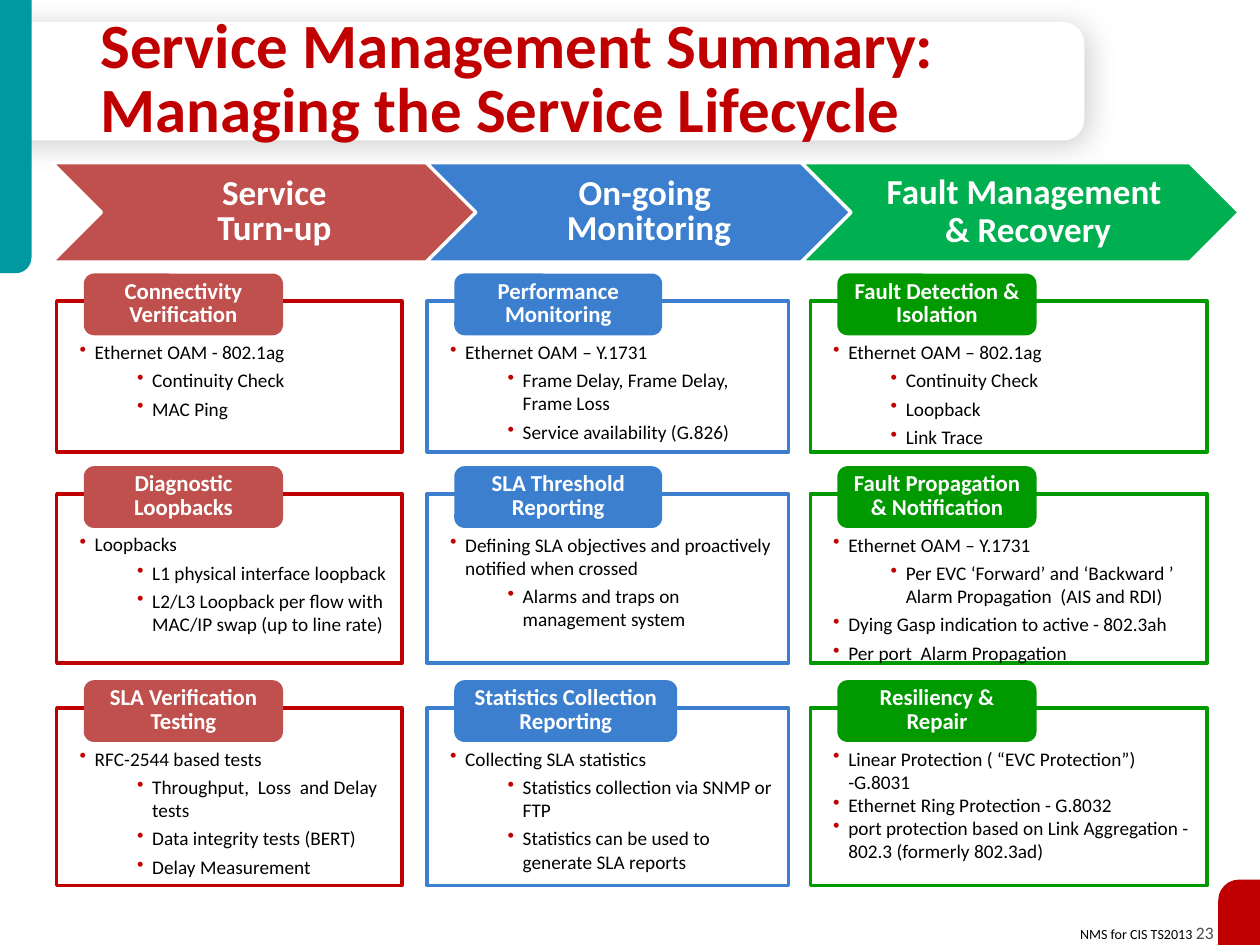
"""Build the service lifecycle summary slide."""
from lxml.etree import SubElement
from pptx import Presentation
from pptx.dml.color import RGBColor
from pptx.enum.shapes import MSO_SHAPE as Shape
from pptx.enum.text import MSO_ANCHOR as Anchor, MSO_AUTO_SIZE as AutoSize, PP_ALIGN as Align
from pptx.oxml.ns import qn
from pptx.util import Pt

WHITE = RGBColor(0xFF, 0xFF, 0xFF)
BLACK = RGBColor(0x00, 0x00, 0x00)
GREY = RGBColor(0x4D, 0x4D, 0x4D)
TEAL = RGBColor(0x00, 0x98, 0xA1)
RED = RGBColor(0xC0, 0x00, 0x00)
BRICK = RGBColor(0xC0, 0x50, 0x4D)
BLUE = RGBColor(0x3D, 0x7F, 0xCF)
LEAF = RGBColor(0x00, 0xB0, 0x50)
GREEN = RGBColor(0x00, 0x9A, 0x00)

FONT = "Calibri"
ROWS = [(172.1, 86.2), (282.2, 96.8), (404.5, 101.5)]
PHASES = [
    ("Service\nTurn-up", 29.5, BRICK, 0.85),
    ("On-going \vMonitoring", 243.5, BLUE, 0.85),
    ("Fault Management\v & Recovery", 457.9, LEAF, 0.9),
]
# Card: heading, heading width, body height, gap before bullets, (level, text) bullets
COLUMNS = [
    (32.4, 197.3, RED, BRICK, [
        ("Connectivity Verification", 113.8, 53.3, 3, [
            (0, "Ethernet OAM - 802.1ag"),
            (1, "Continuity Check"),
            (1, "MAC Ping")]),
        ("Diagnostic Loopbacks", 113.8, 93.6, 3, [
            (0, "Loopbacks"),
            (1, "L1 physical interface loopback"),
            (1, "L2/L3 Loopback per flow with MAC/IP swap (up to line rate)")]),
        ("SLA Verification\nTesting", 113.8, 84.2, 3, [
            (0, "RFC-2544 based tests"),
            (1, "Throughput,  Loss  and Delay tests"),
            (1, "Data integrity tests (BERT)"),
            (1, "Delay Measurement")]),
    ]),
    (244.1, 206.6, BLUE, BLUE, [
        ("Performance Monitoring", 118.8, 67, 3, [
            (0, "Ethernet OAM – Y.1731"),
            (1, "Frame Delay, Frame Delay, Frame Loss"),
            (1, "Service availability (G.826)")]),
        ("SLA Threshold Reporting", 118.8, 66.2, 3, [
            (0, "Defining SLA objectives and proactively notified when crossed"),
            (1, "Alarms and traps on management system")]),
        ("Statistics Collection Reporting", 127.4, 79.9, 3, [
            (0, "Collecting SLA statistics"),
            (1, "Statistics collection via SNMP or FTP"),
            (1, "Statistics can be used to generate SLA reports")]),
    ]),
    (463, 226.8, GREEN, GREEN, [
        ("Fault Detection & Isolation", 113.8, 69.8, 3, [
            (0, "Ethernet OAM – 802.1ag"),
            (1, "Continuity Check"),
            (1, "Loopback"),
            (1, "Link Trace")]),
        ("Fault Propagation & Notification", 113.8, 82.8, 3, [
            (0, "Ethernet OAM – Y.1731"),
            (1, "Per EVC ‘Forward’ and ‘Backward ’ Alarm Propagation  (AIS and RDI)"),
            (0, "Dying Gasp indication to active - 802.3ah"),
            (0, "Per port  Alarm Propagation")]),
        ("Resiliency & Repair", 113.8, 74.2, 0, [
            (0, "Linear Protection ( “EVC Protection”)  -G.8031"),
            (0, "Ethernet Ring Protection - G.8032"),
            (0, "port protection based on Link Aggregation - 802.3 (formerly 802.3ad)")]),
    ]),
]


def write(paragraph, text, size, color, bold=False, align=Align.LEFT, spacing=1.0, before=0):
    """Set one paragraph's text and format, keeping any runs already there."""
    earlier = len(paragraph.runs)
    for position, line in enumerate(text.split("\v")):
        if position:
            paragraph.add_line_break()
        paragraph.add_run().text = line
    for run in paragraph.runs[earlier:]:
        run.font.name, run.font.size, run.font.bold = FONT, Pt(size), bold
        run.font.color.rgb = color
    paragraph.alignment, paragraph.line_spacing = align, spacing
    paragraph.space_before = Pt(before)


def paragraphs(frame, count):
    """Return the frame's first paragraph followed by new ones, count in all."""
    return [frame.paragraphs[0]] + [frame.add_paragraph() for _ in range(count - 1)]


def prepare(frame, insets=(7.2, 3.6, 7.2, 3.6), anchor=Anchor.TOP, wrap=True):
    """Set a text frame's margins, anchor and wrapping."""
    frame.margin_left, frame.margin_top, frame.margin_right, frame.margin_bottom = map(Pt, insets)
    frame.vertical_anchor, frame.word_wrap = anchor, wrap
    return frame


def add_block(shapes, preset, box, fill=None, line=None):
    """Add a preset shape with a flat fill and an optional 2 pt outline."""
    block = shapes.add_shape(preset, *map(Pt, box))
    block.shadow.inherit = False
    if fill is None:
        block.fill.background()
    else:
        block.fill.solid()
        block.fill.fore_color.rgb = fill
    if line is None:
        block.line.fill.background()
    else:
        block.line.color.rgb = line
        block.line.width = Pt(2)
    return block


def label(block, text, size, insets, spacing):
    """Write centred bold white text into a block."""
    frame = prepare(block.text_frame, insets, Anchor.MIDDLE)
    lines = text.split("\n")
    for paragraph, line in zip(paragraphs(frame, len(lines)), lines):
        write(paragraph, line, size, WHITE, bold=True, align=Align.CENTER, spacing=spacing)


def add_bullet(paragraph, level):
    """Give a paragraph a red hanging bullet."""
    paragraph.level = level
    properties = paragraph._p.get_or_add_pPr()
    properties.set("marL", str(Pt(41.5 if level else 8.64)))
    properties.set("indent", str(-Pt(8.64)))
    color = SubElement(properties, qn("a:buClr"))
    SubElement(color, qn("a:srgbClr"), val=str(RED))
    SubElement(properties, qn("a:buChar"), char="•")


def add_card(shapes, left, top, width, height, outline, fill, card):
    """Add one framed topic with its heading tab and bullets."""
    heading, heading_width, body_height, gap, bullets = card
    add_block(shapes, Shape.RECTANGLE, (left, top, width, height), line=outline)
    tab = add_block(shapes, Shape.ROUNDED_RECTANGLE,
                    (left + 15.5, top - 15.8, heading_width, 35.3), fill)
    label(tab, heading, 13, (7.2, 2.9, 7.2, 3.6), 0.85)
    body = shapes.add_textbox(*map(Pt, (left + 6, top + 18.7, width - 6.8, body_height)))
    frame = prepare(body.text_frame)
    frame.auto_size = AutoSize.SHAPE_TO_FIT_TEXT
    for index, (paragraph, (level, text)) in enumerate(
            zip(paragraphs(frame, len(bullets)), bullets)):
        add_bullet(paragraph, level)
        write(paragraph, text, 11, BLACK, before=gap if index else 0)


def add_soft_shadow(block):
    """Give a block a faint blurred shadow to the lower right."""
    effects = block._element.spPr.find(qn("a:effectLst"))
    shadow = SubElement(effects, qn("a:outerShdw"), blurRad=str(Pt(17)), dist=str(Pt(3)),
                        dir="2700000", algn="tl", rotWithShape="0")
    color = SubElement(shadow, qn("a:srgbClr"), val=str(BLACK))
    SubElement(color, qn("a:alpha"), val="19000")


def add_backdrop(shapes):
    """Add the footer, title banner and corner accents."""
    footer = shapes.add_textbox(*map(Pt, (607.7, 523.4, 92.9, 19.4)))
    credit = prepare(footer.text_frame, wrap=False).paragraphs[0]
    write(credit, "NMS for CIS TS2013 ", 8, BLACK, align=Align.RIGHT)
    write(credit, "23", 10, GREY, align=Align.RIGHT)
    banner = add_block(shapes, Shape.ROUND_2_SAME_RECTANGLE, (275.8, -263.5, 67.7, 619.9), WHITE)
    banner.rotation = 90
    banner.adjustments[0] = 0.18
    add_soft_shadow(banner)
    for box, fill, flip in (((0, 0, 18, 156.2), TEAL, "flipV"),
                            ((696.2, 502.6, 23.8, 37.4), RED, "flipH")):
        accent = add_block(shapes, Shape.ROUND_1_RECTANGLE, box, fill)
        accent.adjustments[0] = 0.5
        accent._element.spPr.xfrm.set(flip, "1")


def main():
    """Assemble and save the slide."""
    deck = Presentation()
    deck.slide_width, deck.slide_height = Pt(720), Pt(540)
    shapes = deck.slides.add_slide(deck.slide_layouts[6]).shapes
    add_backdrop(shapes)
    title = shapes.add_textbox(*map(Pt, (50.4, 20.9, 532.8, 51.1)))
    write(prepare(title.text_frame, anchor=Anchor.MIDDLE).paragraphs[0],
          "Service Management Summary: Managing the Service Lifecycle",
          36, RED, bold=True, spacing=0.85)
    arrows = shapes.add_group_shape().shapes
    for text, left, fill, spacing in PHASES:
        arrow = add_block(arrows, Shape.CHEVRON, (left, 92.9, 250.4, 56.9), fill, WHITE)
        label(arrow, text, 20, (6.5, 2.2, 2.2, 2.2), spacing)
    for left, width, outline, fill, cards in COLUMNS:
        column = shapes.add_group_shape().shapes
        for (top, height), card in zip(ROWS, cards):
            add_card(column, left, top, width, height, outline, fill, card)
    deck.save("out.pptx")


if __name__ == "__main__":
    main()
